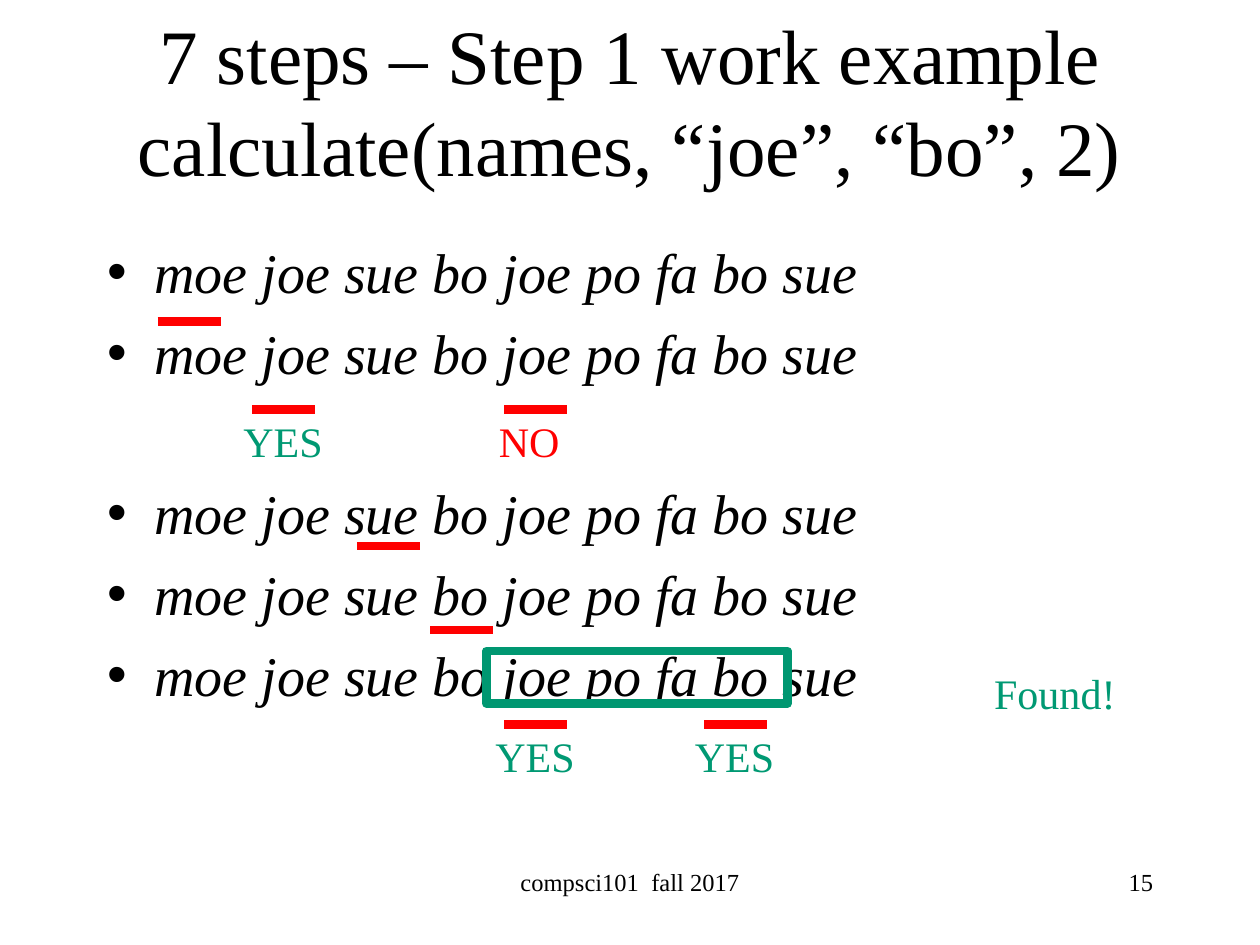
from pptx import Presentation
from pptx.dml.color import RGBColor
from pptx.enum.shapes import MSO_CONNECTOR as Connector, MSO_SHAPE as Shape
from pptx.enum.text import MSO_ANCHOR as Anchor, MSO_AUTO_SIZE as AutoSize, PP_ALIGN as Align
from pptx.oxml.ns import qn
from pptx.util import Pt
from lxml import etree

BLACK = RGBColor(0x00, 0x00, 0x00)
RED = RGBColor(0xFF, 0x00, 0x00)
GREEN = RGBColor(0x00, 0x99, 0x73)
FRAME_GREEN = RGBColor(0x00, 0x97, 0x71)
FONT = "Times New Roman"


def write(part, text, size, color, align=Align.LEFT, italic=False):
    """Fill a text part, one paragraph per line, and format it."""
    part.text_frame.text = text
    for paragraph in part.text_frame.paragraphs:
        paragraph.alignment = align
        style = {"name": FONT, "size": Pt(size), "italic": italic}
        for run in paragraph.runs:
            for key, value in style.items():
                setattr(run.font, key, value)
            run.font.color.rgb = color


def place(part, left, top, width, height):
    box = {"left": left, "top": top, "width": width, "height": height}
    for key, value in box.items():
        setattr(part, key, Pt(value))


prs = Presentation()
prs.slide_width, prs.slide_height = Pt(720), Pt(540)
slide = prs.slides.add_slide(prs.slide_layouts[1])
shapes = slide.shapes

# Title
title = shapes.title
place(title, 54, 12, 612, 90)
write(title, "7 steps – Step 1 work example\vcalculate(names, “joe”, “bo”, 2)",
      44, BLACK, Align.CENTER)
title.text_frame.vertical_anchor = Anchor.MIDDLE
title.text_frame.auto_size = AutoSize.NONE

# The list of names, once for each step; a wider gap leaves room for the answers
steps = slide.placeholders[1]
place(steps, 54, 132, 612, 348)
write(steps, "\n".join(["moe joe sue bo joe po fa bo sue"] * 5), 32, BLACK, italic=True)
steps.text_frame.auto_size = AutoSize.NONE
for paragraph, gap in zip(steps.text_frame.paragraphs, (8, 8, 53, 8, 8)):
    paragraph.space_before = Pt(gap)
    properties = paragraph._p.get_or_add_pPr()
    properties.set("marL", str(Pt(27)))
    properties.set("indent", str(-Pt(27)))
    etree.SubElement(properties, qn("a:buChar")).set("char", "•")

# Footer and page number
for text, left, width, align in (("compsci101  fall 2017", 246, 228, Align.CENTER),
                                 ("15", 516, 150, Align.RIGHT)):
    footer = shapes.add_textbox(Pt(left), Pt(492), Pt(width), Pt(36))
    footer.text_frame.word_wrap = True
    write(footer, text, 14, BLACK, align)

# Red underlines below the names being checked
for left, top in ((90, 183.6), (144, 234), (288, 234), (204, 312),
                  (246, 360), (288, 414), (402.5, 414)):
    underline = shapes.add_connector(Connector.STRAIGHT, Pt(left), Pt(top),
                                     Pt(left + 36), Pt(top))
    underline.line.color.rgb = RED
    underline.line.width = Pt(5)
    etree.SubElement(underline._element.spPr, qn("a:effectLst"))

# Frame around the match
match = shapes.add_shape(Shape.RECTANGLE, Pt(278), Pt(372), Pt(172), Pt(30))
match.shadow.inherit = False
match.fill.background()
match.line.color.rgb = FRAME_GREEN
match.line.width = Pt(5)

# Answers
for text, left, top, width, color in (
        ("YES", 132, 234, 60.5, GREEN), ("NO", 278, 234, 49.5, RED),
        ("YES", 276, 414, 60.5, GREEN), ("YES", 390, 414, 60.5, GREEN),
        ("Found!", 561, 378, 84, GREEN)):
    answer = shapes.add_textbox(Pt(left), Pt(top), Pt(width), Pt(36))
    answer.text_frame.word_wrap = False
    answer.text_frame.auto_size = AutoSize.SHAPE_TO_FIT_TEXT
    write(answer, text, 24, color)

prs.save("out.pptx")
